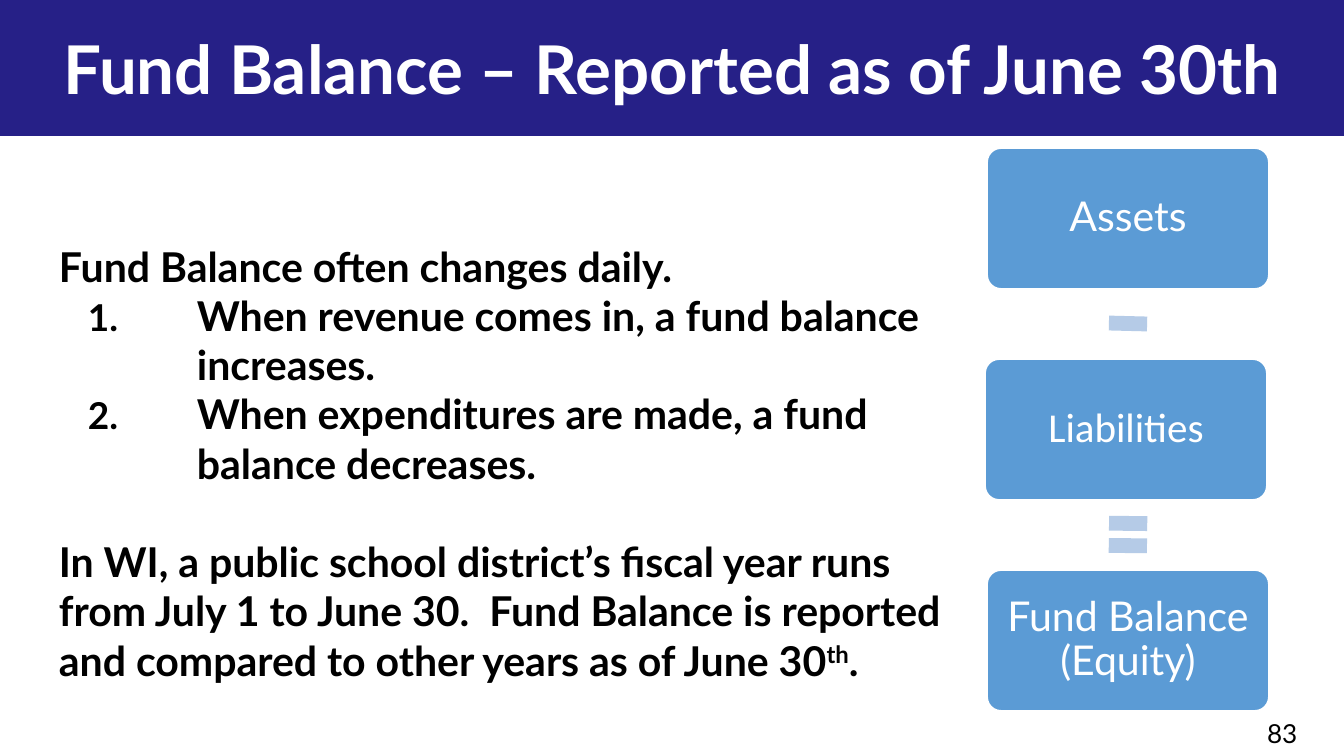
from lxml.etree import SubElement
from pptx import Presentation
from pptx.dml.color import RGBColor
from pptx.enum.shapes import MSO_SHAPE
from pptx.enum.text import MSO_ANCHOR, PP_ALIGN
from pptx.oxml.ns import qn
from pptx.util import Emu, Pt

NAVY = RGBColor(0x26, 0x20, 0x87)
BLUE = RGBColor(0x5B, 0x9B, 0xD5)
PALE = RGBColor(0xB5, 0xCB, 0xE7)
WHITE = RGBColor(0xFF, 0xFF, 0xFF)
BLACK = RGBColor(0, 0, 0)

WIDE, HIGH = 1344, 756
LINES = (
    "Fund Balance often changes daily.",
    "When revenue comes in, a fund balance increases.",
    "When expenditures are made, a fund balance decreases.",
    "In WI, a public school district’s fiscal year runs from July 1 to June 30.  "
    "Fund Balance is reported and compared to other years as of June 30",
)
CARDS = (("Assets", "Lato", 0), ("Liabilities", "Calibri", -2), ("Fund Balance (Equity)", "Lato", 0))
SIGNS = ((MSO_SHAPE.MATH_MINUS, 181.4), (MSO_SHAPE.MATH_EQUAL, 180.6))


def px(n):
    return Emu(round(n * 914400 / 134.4))


def inset(frame, side, top):
    frame.margin_left = frame.margin_right = px(side)
    frame.margin_top = frame.margin_bottom = px(top)
    frame.word_wrap = True


def style(para, size, color, face="Lato", bold=False):
    for run in para.runs:
        font = run.font
        font.size, font.name, font.bold = Pt(size), face, bold
        font.color.rgb = color


def shape(slide, kind, box, fill):
    item = slide.shapes.add_shape(kind, *map(px, box))
    item.shadow.inherit = False
    item.fill.solid()
    item.fill.fore_color.rgb = fill
    item.line.fill.background()
    return item


def label(item, text, size, face="Lato", bold=False):
    """Write centred white text in a shape."""
    frame = item.text_frame
    frame.text = text
    frame.vertical_anchor = MSO_ANCHOR.MIDDLE
    para = frame.paragraphs[0]
    para.alignment = PP_ALIGN.CENTER
    style(para, size, WHITE, face, bold)
    return para


def number(para):
    """Make a paragraph a hanging numbered item."""
    props = para._p.get_or_add_pPr()
    props.set("marL", str(px(138)))
    props.set("indent", str(px(-109)))
    SubElement(props, qn("a:buSzPct"), val="90000")
    SubElement(props, qn("a:buFont"), typeface="Lato")
    SubElement(props, qn("a:buAutoNum"), type="arabicPeriod")


def header(slide, box):
    band = shape(slide, MSO_SHAPE.RECTANGLE, box, NAVY)
    inset(band.text_frame, 13, 7)
    label(band, "Fund Balance – Reported as of June 30th", 36, bold=True)


def body(slide, box):
    frame = slide.shapes.add_textbox(*map(px, box)).text_frame
    inset(frame, 13, 0)
    frame.text = "\n".join(LINES)
    first, *items, last = frame.paragraphs
    for item in items:
        number(item)
    last.space_before = Pt(26.4)
    for text in ("th", "."):
        last.add_run().text = text
    for para in (first, *items, last):
        style(para, 22, BLACK, bold=True)
    last.runs[1].font._element.set("baseline", "30000")


def stack(slide, box):
    """Stack the cards in the box, with a sign in each gap."""
    left, top, wide, high = box
    tall = 141
    gap = (high - tall * len(CARDS)) // (len(CARDS) - 1)
    for i, (text, face, shift) in enumerate(CARDS):
        y = top + i * (tall + gap)
        card = shape(slide, MSO_SHAPE.ROUNDED_RECTANGLE, (left + shift, y, wide, tall), BLUE)
        card.adjustments[0] = 0.1
        card.line.color.rgb = WHITE
        card.line.width = Pt(1)
        inset(card.text_frame, 16, 16)
        label(card, text, 22, face).line_spacing = 0.9
        if i < len(SIGNS):
            kind, turn = SIGNS[i]
            spot = (left + (wide - 52) // 2, y + tall + (gap - 63) // 2, 52, 63)
            shape(slide, kind, spot, PALE).rotation = turn


def footer(slide, box):
    frame = slide.shapes.add_textbox(*map(px, box)).text_frame
    inset(frame, 13, 7)
    frame.text = "83"
    style(frame.paragraphs[0], 14, BLACK)


def main():
    deck = Presentation()
    deck.slide_width, deck.slide_height = px(WIDE), px(HIGH)
    slide = deck.slides.add_slide(deck.slide_layouts[6])
    header(slide, (0, 0, WIDE, 136))
    body(slide, (46, 241, 939, 451))
    stack(slide, (987, 148, 282, 563))
    footer(slide, (1254, 710, 74, 34))
    deck.save("out.pptx")


if __name__ == "__main__":
    main()
